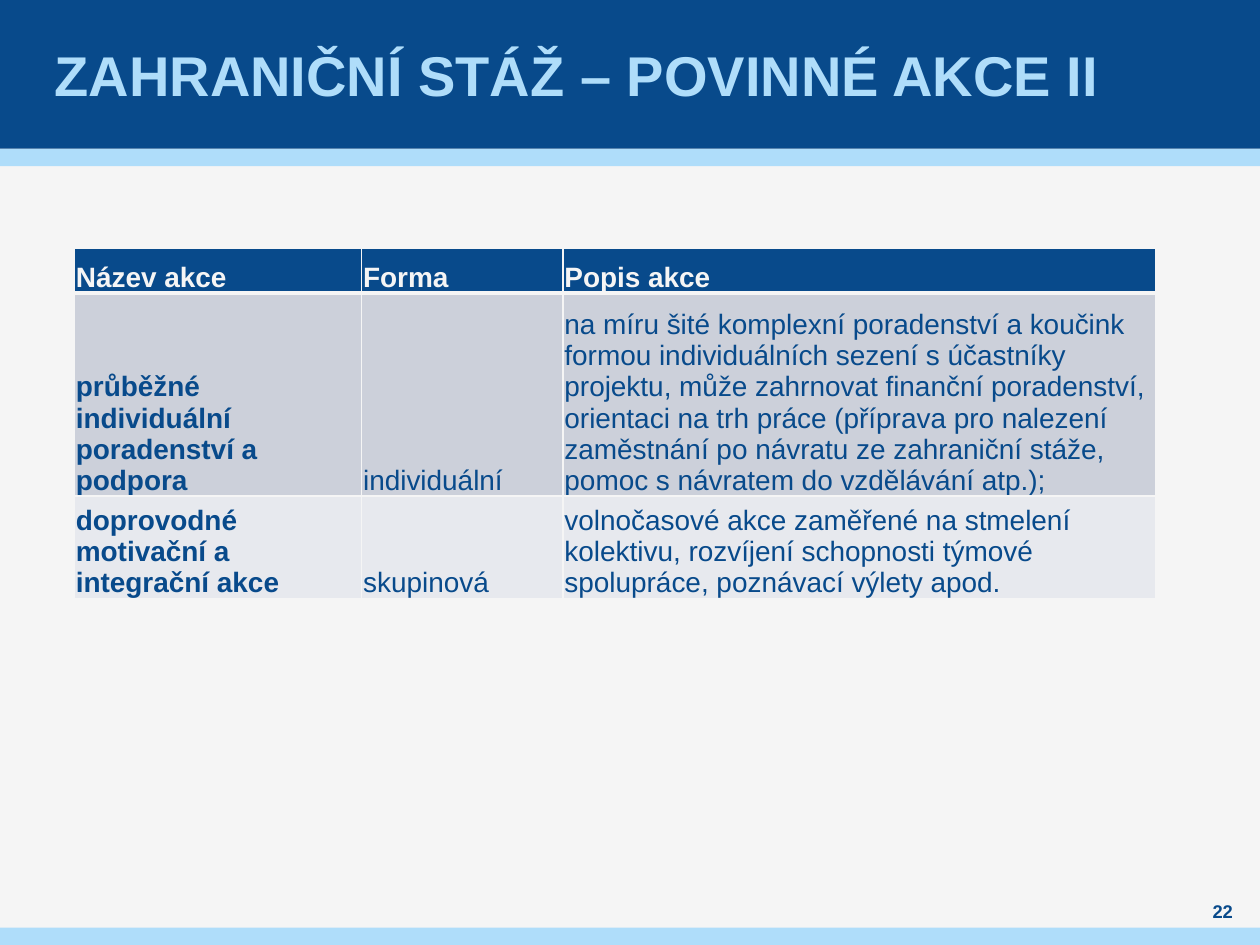
import pptx
import pptx.util
import pptx.dml.color
import pptx.enum.shapes
import pptx.enum.text
import pptx.oxml
import pptx.oxml.ns

Cm, Pt = pptx.util.Cm, pptx.util.Pt
Anchor = pptx.enum.text.MSO_ANCHOR
Align = pptx.enum.text.PP_ALIGN

theme = {
    "font": "Arial",
    "navy": "084A8B", "sky": "AFDDFA", "paper": "F5F5F5",
    "dark": "CCD0DA", "light": "E7E9EE",
    "title": 32, "body": 16, "number": 10.5,
}


def rgb(name):
    return pptx.dml.color.RGBColor.from_string(theme[name])


def write(frame, text, size, color, bold, anchor, align=Align.LEFT):
    """Put one formatted run into the first paragraph of a text frame."""
    frame.word_wrap = True
    frame.vertical_anchor = anchor
    line = frame.paragraphs[0]
    line.alignment = align
    run = line.add_run()
    run.text = text
    run.font.name = theme["font"]
    run.font.size = Pt(theme[size])
    run.font.bold = bold
    run.font.color.rgb = rgb(color)


deck = pptx.Presentation()
deck.slide_width, deck.slide_height = Cm(25.4), Cm(19.05)
slide = deck.slides.add_slide(deck.slide_layouts[5])
slide.background.fill.solid()
slide.background.fill.fore_color.rgb = rgb("paper")

# Bands lie behind the title
bands = [(0, 3, "navy"), (3, 0.35, "sky"), (18.7, 0.35, "sky")]
for top, height, color in bands:
    band = slide.shapes.add_shape(
        pptx.enum.shapes.MSO_SHAPE.RECTANGLE, 0, Cm(top), deck.slide_width, Cm(height))
    band.shadow.inherit = False
    band.fill.solid()
    band.fill.fore_color.rgb = rgb(color)
    band.line.fill.background()
    slide.shapes._spTree.insert(2, band._element)

title = slide.shapes.title
title.left, title.top, title.width, title.height = Cm(1), Cm(0), Cm(23.4), Cm(3)
frame = title.text_frame
frame.margin_left = frame.margin_right = Cm(0.1)
frame.margin_top = frame.margin_bottom = 0
frame.auto_size = pptx.enum.text.MSO_AUTO_SIZE.NONE
write(frame, "ZAHRANIČNÍ STÁŽ – POVINNÉ AKCE II", "title", "sky", True, Anchor.MIDDLE)

number = slide.shapes.add_textbox(Cm(24), Cm(18.11), Cm(1.3), Cm(0.5))
frame = number.text_frame
frame.margin_left = frame.margin_right = frame.margin_top = frame.margin_bottom = 0
write(frame, "22", "number", "navy", True, Anchor.MIDDLE, Align.CENTER)

rows = [
    ("Název akce", "Forma", "Popis akce"),
    ("průběžné individuální poradenství a podpora", "individuální",
     "na míru šité komplexní poradenství a koučink formou individuálních sezení "
     "s účastníky projektu, může zahrnovat finanční poradenství, orientaci na trh "
     "práce (příprava pro nalezení zaměstnání po návratu ze zahraniční stáže, "
     "pomoc s návratem do vzdělávání atp.);"),
    ("doprovodné motivační a integrační akce", "skupinová",
     "volnočasové akce zaměřené na stmelení kolektivu, rozvíjení schopnosti "
     "týmové spolupráce, poznávací výlety apod."),
]
widths = [5.79, 4.06, 11.94]
heights = [0.91, 3.78, 1.9]
fills = ["navy", "dark", "light"]

table = slide.shapes.add_table(
    len(rows), len(widths), Cm(1.5), Cm(5), Cm(sum(widths)), Cm(sum(heights))).table
for column, width in zip(table.columns, widths):
    column.width = Cm(width)
for r, texts in enumerate(rows):
    table.rows[r].height = Cm(heights[r])
    for c, text in enumerate(texts):
        cell = table.cell(r, c)
        cell.margin_left = cell.margin_right = cell.margin_top = Cm(0.03)
        cell.margin_bottom = 0
        cell.fill.solid()
        cell.fill.fore_color.rgb = rgb(fills[r])
        write(cell.text_frame, text, "body", "navy" if r else "paper",
              r == 0 or c == 0, Anchor.BOTTOM)
        cell.vertical_anchor = Anchor.BOTTOM
        # The rule under the header is thicker than the others
        edges = {"L": 1, "R": 1, "T": 3 if r == 1 else 1, "B": 3 if r == 0 else 1}
        for place, (side, width) in enumerate(edges.items()):
            edge = pptx.oxml.parse_xml(
                f'<a:ln{side} {pptx.oxml.ns.nsdecls("a")} w="{Pt(width)}"><a:solidFill>'
                f'<a:srgbClr val="{theme["paper"]}"/></a:solidFill></a:ln{side}>')
            cell._tc.get_or_add_tcPr().insert(place, edge)

deck.save("out.pptx")
